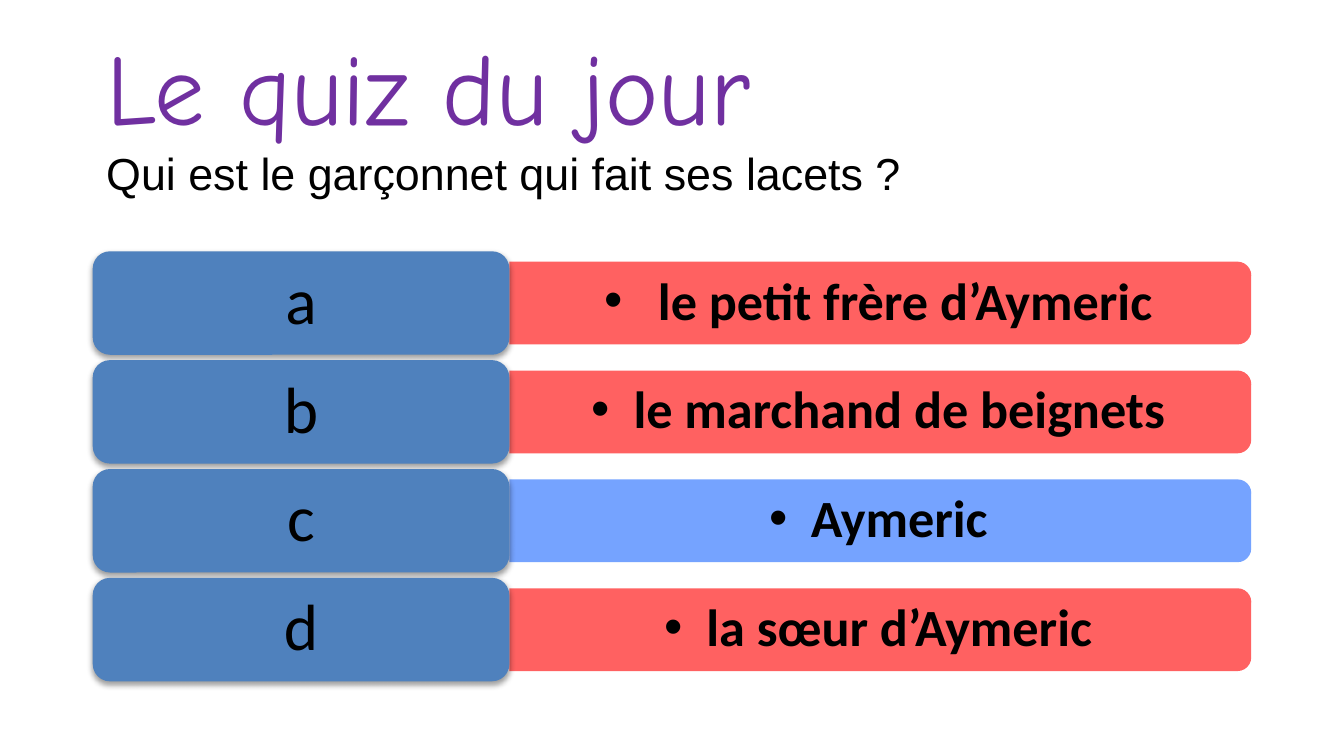
from lxml import etree
from pptx import Presentation
from pptx.dml.color import RGBColor
from pptx.enum.shapes import MSO_SHAPE
from pptx.enum.text import MSO_ANCHOR, MSO_AUTO_SIZE, PP_ALIGN
from pptx.oxml.ns import qn
from pptx.util import Inches, Pt

ROUNDED = MSO_SHAPE.ROUNDED_RECTANGLE
ROUND_TWO = MSO_SHAPE.ROUND_2_SAME_RECTANGLE
MIDDLE = MSO_ANCHOR.MIDDLE
NO_AUTOFIT = MSO_AUTO_SIZE.NONE
LEFT, CENTER = PP_ALIGN.LEFT, PP_ALIGN.CENTER

BLACK, PURPLE = "000000", "7030A0"
RED, BLUE, LABEL_BLUE = "FF5050", "6699FF", "4F81BD"

ANSWERS = [
    ("a", " le petit frère d’Aymeric", RED),
    ("b", "le marchand de beignets", RED),
    ("c", "Aymeric", BLUE),
    ("d", "la sœur d’Aymeric", RED),
]


def color(hex_string):
    return RGBColor.from_string(hex_string)


def add_text(p, text, size, font, rgb=BLACK, bold=False):
    r = p.add_run()
    r.text = text
    r.font.size = Pt(size)
    r.font.name = font
    r.font.bold = bold
    r.font.color.rgb = color(rgb)
    return r


def set_frame(tf, inset_x, inset_y):
    tf.word_wrap = True
    tf.auto_size = NO_AUTOFIT
    tf.vertical_anchor = MIDDLE
    tf.margin_left = tf.margin_right = Inches(inset_x)
    tf.margin_top = tf.margin_bottom = Inches(inset_y)


def add_box(s, kind, left, top, width, height, rgb):
    sp = s.shapes.add_shape(kind, Inches(left), Inches(top), Inches(width), Inches(height))
    sp.shadow.inherit = False
    sp.fill.solid()
    sp.fill.fore_color.rgb = color(rgb)
    sp.line.fill.background()
    return sp


def set_alpha(color_element, percent):
    etree.SubElement(color_element, qn("a:alpha"), val=str(percent * 1000))


def add_shadow(sp):
    effects = sp._element.spPr.find(qn("a:effectLst"))
    shadow = etree.SubElement(effects, qn("a:outerShdw"), blurRad=str(Pt(3.1)),
                              dist=str(Pt(1.6)), dir="5400000", rotWithShape="0")
    set_alpha(etree.SubElement(shadow, qn("a:srgbClr"), val=BLACK), 38)


def add_bullet(p, indent):
    pPr = p._p.get_or_add_pPr()
    pPr.set("marL", str(Inches(indent)))
    pPr.set("indent", str(-Inches(indent)))
    etree.SubElement(pPr, qn("a:buFont"), typeface="Arial")
    etree.SubElement(pPr, qn("a:buChar"), char="•")


def place_title(s, left, top, width, height):
    title = s.shapes.title
    title.left, title.top = Inches(left), Inches(top)
    title.width, title.height = Inches(width), Inches(height)
    set_frame(title.text_frame, 0.1, 0.05)
    p = title.text_frame.paragraphs[0]
    p.alignment = LEFT
    add_text(p, "Le quiz du jour", 54, "Comic Neue", PURPLE)
    p.add_line_break()
    add_text(p, "Qui est le garçonnet qui fait ses lacets ?", 24, "Arial")


def place_answer(s, left, top, width, height, letter, answer, rgb):
    label_w = 3.1
    bar_w, bar_h = width - label_w, 0.8 * height
    bar_left, bar_top = left + label_w, top + 0.1 * height

    # Answer bar: turned a quarter so that its rounded corners face right
    bar = add_box(s, ROUND_TWO, bar_left + (bar_w - bar_h) / 2,
                  bar_top + (bar_h - bar_w) / 2, bar_h, bar_w, rgb)
    bar.rotation = 90
    set_alpha(bar._element.spPr.find(qn("a:solidFill"))[0], 90)

    # Answer text, upright over the bar
    tb = s.shapes.add_textbox(Inches(bar_left), Inches(bar_top + 0.03),
                              Inches(bar_w - 0.03), Inches(bar_h - 0.06))
    set_frame(tb.text_frame, 0.12, 0.06)
    p = tb.text_frame.paragraphs[0]
    p.level = 1
    p.alignment = CENTER
    p.line_spacing = 0.9
    add_bullet(p, 0.31)
    add_text(p, answer, 28, "Calibri", bold=True)

    # Letter label
    label = add_box(s, ROUNDED, left, top, label_w, height, LABEL_BLUE)
    add_shadow(label)
    set_frame(label.text_frame, 0.15, 0.07)
    p = label.text_frame.paragraphs[0]
    p.alignment = CENTER
    p.line_spacing = 0.9
    add_text(p, letter, 35, "Calibri")


def place_answers(s, left, top, width, height):
    row_h = 0.77
    pitch = (height - row_h) / (len(ANSWERS) - 1)
    for i, (letter, answer, rgb) in enumerate(ANSWERS):
        place_answer(s, left, top + i * pitch, width, row_h, letter, answer, rgb)


def main():
    prs = Presentation()
    prs.slide_width = Inches(10)
    prs.slide_height = prs.slide_width * 9 // 16
    s = prs.slides.add_slide(prs.slide_layouts[5])
    place_title(s, 0.69, 0.16, 8.62, 1.35)
    place_answers(s, 0.69, 1.87, 8.62, 3.2)
    prs.save("out.pptx")


if __name__ == "__main__":
    main()
